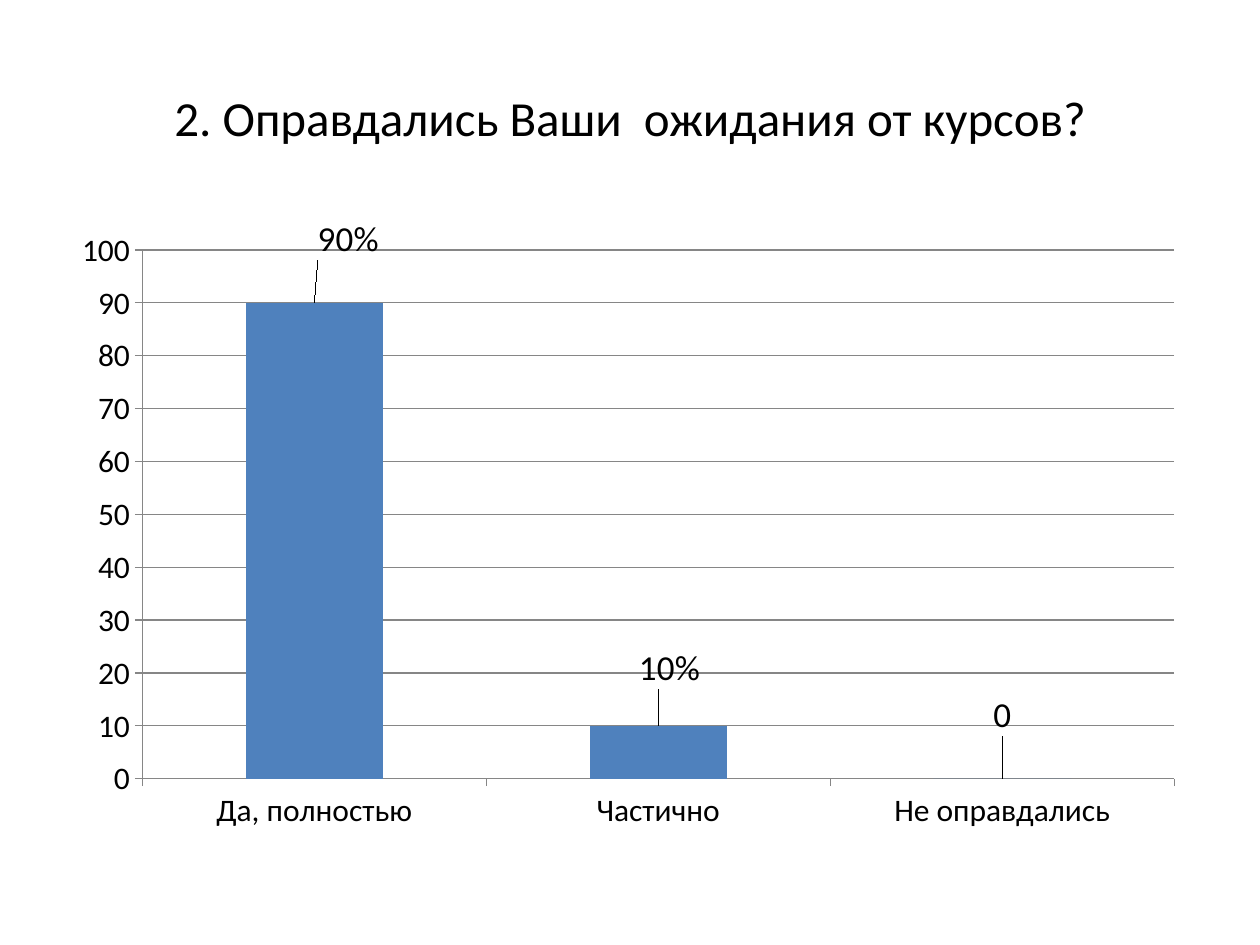
from dataclasses import dataclass

from lxml.etree import QName, SubElement
from pptx import Presentation
from pptx.chart.data import CategoryChartData
from pptx.dml.color import RGBColor
from pptx.enum.chart import XL_CHART_TYPE, XL_LABEL_POSITION, XL_TICK_MARK
from pptx.enum.text import MSO_ANCHOR, PP_ALIGN
from pptx.oxml.ns import qn
from pptx.util import Inches, Pt


@dataclass(frozen=True)
class Theme:
    font: str = "Calibri"
    text: RGBColor = RGBColor(0, 0, 0)
    bar: RGBColor = RGBColor(0x4F, 0x81, 0xBD)
    line: RGBColor = RGBColor(0x86, 0x86, 0x86)
    title_size: int = 28
    label_size: int = 20
    axis_size: int = 18


@dataclass(frozen=True)
class Answer:
    category: str
    value: int
    label: str
    shift: tuple


def set_layout(parent, index, **settings):
    """Give a chart part a manual layout, placed as its child at index."""
    for old in parent.findall(qn("c:layout")):
        parent.remove(old)
    layout = SubElement(parent, qn("c:layout"))
    parent.insert(index, layout)
    manual = SubElement(layout, qn("c:manualLayout"))
    for name, value in settings.items():
        SubElement(manual, QName(layout).namespace.join("{}") + name, val=str(value))


class SlideBuilder:
    def __init__(self, deck, theme):
        self.deck = deck
        self.theme = theme
        self.page = deck.slides.add_slide(deck.slide_layouts[5])

    def frame(self, left, top, width, height):
        """Turn shares of the slide's size into lengths."""
        wide, high = self.deck.slide_width, self.deck.slide_height
        return (int(left * wide), int(top * high),
                int(width * wide), int(height * high))

    def style(self, font, size):
        font.name = self.theme.font
        font.size = Pt(size)
        font.color.rgb = self.theme.text

    def title(self, text, *shares):
        box = self.page.shapes.title
        box.left, box.top, box.width, box.height = self.frame(*shares)
        box.text_frame.text = text
        box.text_frame.vertical_anchor = MSO_ANCHOR.MIDDLE
        para = box.text_frame.paragraphs[0]
        para.alignment = PP_ALIGN.CENTER
        self.style(para.runs[0].font, self.theme.title_size)

    def column_chart(self, answers, *shares):
        data = CategoryChartData()
        data.categories = [answer.category for answer in answers]
        data.add_series("Series 1", [answer.value for answer in answers])
        chart = self.page.shapes.add_chart(
            XL_CHART_TYPE.COLUMN_CLUSTERED, *self.frame(*shares), data).chart
        chart.has_legend = False
        chart.has_title = False
        self.style(chart.font, self.theme.axis_size)
        self.axes(chart)

        plot = chart.plots[0]
        plot.gap_width = 150
        plot.vary_by_categories = False
        series = plot.series[0]
        series.format.fill.solid()
        series.format.fill.fore_color.rgb = self.theme.bar
        self.labels(series, answers)
        set_layout(plot._element.getparent(), 0, layoutTarget="inner",
                   xMode="edge", yMode="edge", x=0.07, y=0.05, w=0.91, h=0.85)

    def axes(self, chart):
        values = chart.value_axis
        values.minimum_scale, values.maximum_scale = 0, 100
        values.major_unit = 10
        values.has_major_gridlines = True
        values.major_gridlines.format.line.color.rgb = self.theme.line
        for axis in (chart.category_axis, values):
            axis.major_tick_mark = XL_TICK_MARK.OUTSIDE
            axis.format.line.color.rgb = self.theme.line

    def labels(self, series, answers):
        series.data_labels.show_value = True
        self.style(series.data_labels.font, self.theme.label_size)
        for index, answer in enumerate(answers):
            label = series.points[index].data_label
            if answer.label:
                label.text_frame.text = answer.label
                span = label.text_frame.paragraphs[0].runs[0]
                self.style(span.font, self.theme.label_size)
            else:
                self.style(label.font, self.theme.label_size)
            label.position = XL_LABEL_POSITION.OUTSIDE_END
        for element, answer in zip(series._element.iter(qn("c:dLbl")), answers):
            across, down = answer.shift
            set_layout(element, 1, x=across, y=down)


def main():
    deck = Presentation()
    deck.slide_width, deck.slide_height = Inches(10), Inches(7.5)
    slide = SlideBuilder(deck, Theme())
    slide.title("2. Оправдались Ваши  ожидания от курсов?", 0.05, 0.04, 0.9, 1 / 6)
    answers = [
        Answer("Да, полностью", 90, "90%", (0.03, -0.06)),
        Answer("Частично", 10, "10%", (0.01, -0.05)),
        Answer("Не оправдались", 0, "", (0, -0.06)),
    ]
    slide.column_chart(answers, 0.05, 0.23, 0.9, 0.66)
    deck.save("out.pptx")


if __name__ == "__main__":
    main()
